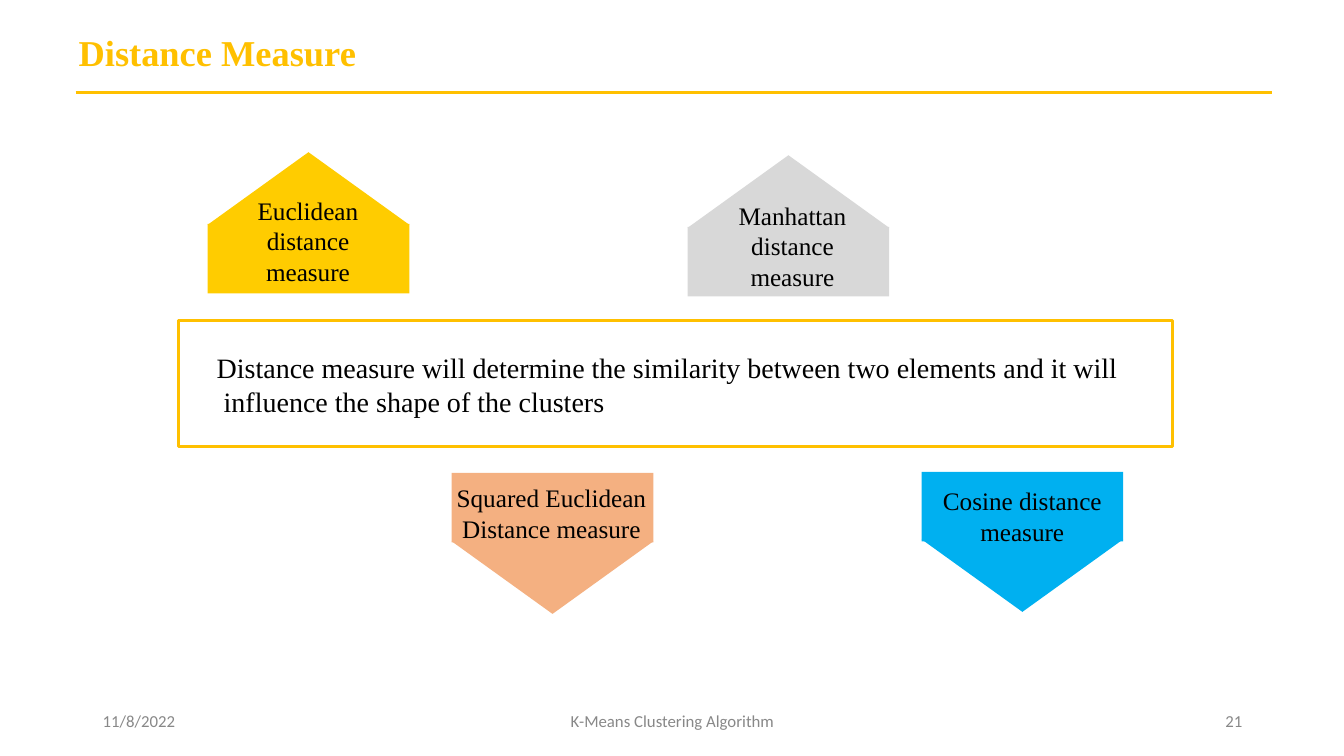
from pptx import Presentation
from pptx.dml.color import RGBColor
from pptx.enum.shapes import MSO_CONNECTOR, MSO_SHAPE
from pptx.enum.text import MSO_ANCHOR, PP_ALIGN
from pptx.oxml.ns import qn
from pptx.util import Pt
from lxml.etree import SubElement

PX = 9144  # EMU in one px, at 100 px to the inch
SERIF = "Times New Roman"
GOLD = "FFC000"
LEFT, MID, RIGHT = PP_ALIGN.LEFT, PP_ALIGN.CENTER, PP_ALIGN.RIGHT


def color(code):
    return RGBColor.from_string(code)


def write(shape, lines, size, hue="000000", face=SERIF, align=LEFT, wrap=False):
    """Fill a shape with one paragraph per line."""
    frame = shape.text_frame
    frame.text = "\n".join(lines)
    frame.word_wrap = wrap
    for para in frame.paragraphs:
        para.alignment = align
        para.font.name = face
        para.font.size = Pt(size)
        para.font.color.rgb = color(hue)
    return frame


deck = Presentation()
deck.slide_width, deck.slide_height = 1333 * PX, 750 * PX
slide = deck.slides.add_slide(deck.slide_layouts[5])
shapes = slide.shapes

# Title and rule
title = shapes.title
title.left, title.top, title.width, title.height = [n * PX for n in (68, 25, 298, 54)]
head = write(title, ["Distance Measure"], 26, GOLD)
head.vertical_anchor = MSO_ANCHOR.TOP
head.paragraphs[0].font.bold = True

rule = shapes.add_connector(MSO_CONNECTOR.STRAIGHT, 75 * PX, 92 * PX, 1262 * PX, 92 * PX)
rule.line.color.rgb = color(GOLD)
rule.line.width = Pt(2.25)
SubElement(rule._element.spPr, qn("a:effectLst"))

# Central statement
frame = shapes.add_shape(MSO_SHAPE.RECTANGLE, 177 * PX, 318 * PX, 986 * PX, 125 * PX)
frame.shadow.inherit = False
frame.fill.background()
frame.line.color.rgb = color(GOLD)
frame.line.width = Pt(2.25)

note = shapes.add_textbox(205 * PX, 343 * PX, 919 * PX, 77 * PX)
text = write(note, [
    "Distance measure will determine the similarity between two elements and it will",
    "influence the shape of the clusters",
], 20)
text.paragraphs[1]._p.get_or_add_pPr().set("marL", str(7 * PX))

# Pointed blocks: left, block top, roof top, turn, fill
for left, base, roof, turn, fill in [
    (206, 222, 151, 0, "FFCC00"),
    (682, 225, 154, 0, "D8D8D8"),
    (914, 468, 535, 180, "00B0F0"),
    (448, 469, 537, 180, "F4B081"),
]:
    for kind, top, high in [
        (MSO_SHAPE.RECTANGLE, base, 69),
        (MSO_SHAPE.ISOSCELES_TRIANGLE, roof, 72),
    ]:
        part = shapes.add_shape(kind, left * PX, top * PX, 200 * PX, high * PX)
        part.rotation = turn
        part.shadow.inherit = False
        part.fill.solid()
        part.fill.fore_color.rgb = color(fill)
        part.line.fill.background()

# Block labels
for left, top, wide, high, lines in [
    (245, 189, 121, 101, ["Euclidean", "distance", "measure"]),
    (722, 194, 128, 101, ["Manhattan", "distance", "measure"]),
    (442, 474, 210, 71, ["Squared Euclidean", "Distance measure"]),
    (921, 477, 186, 71, ["Cosine distance", "measure"]),
]:
    label = shapes.add_textbox(left * PX, top * PX, wide * PX, high * PX)
    write(label, lines, 18, align=MID)

# Footer
for left, wide, line, align in [
    (92, 300, "11/8/2022", LEFT),
    (442, 450, "K-Means Clustering Algorithm", MID),
    (942, 300, "21", RIGHT),
]:
    foot = shapes.add_textbox(left * PX, 695 * PX, wide * PX, 40 * PX)
    body = write(foot, [line], 12, "888888", "Calibri", align, True)
    body.vertical_anchor = MSO_ANCHOR.MIDDLE

deck.save("out.pptx")
